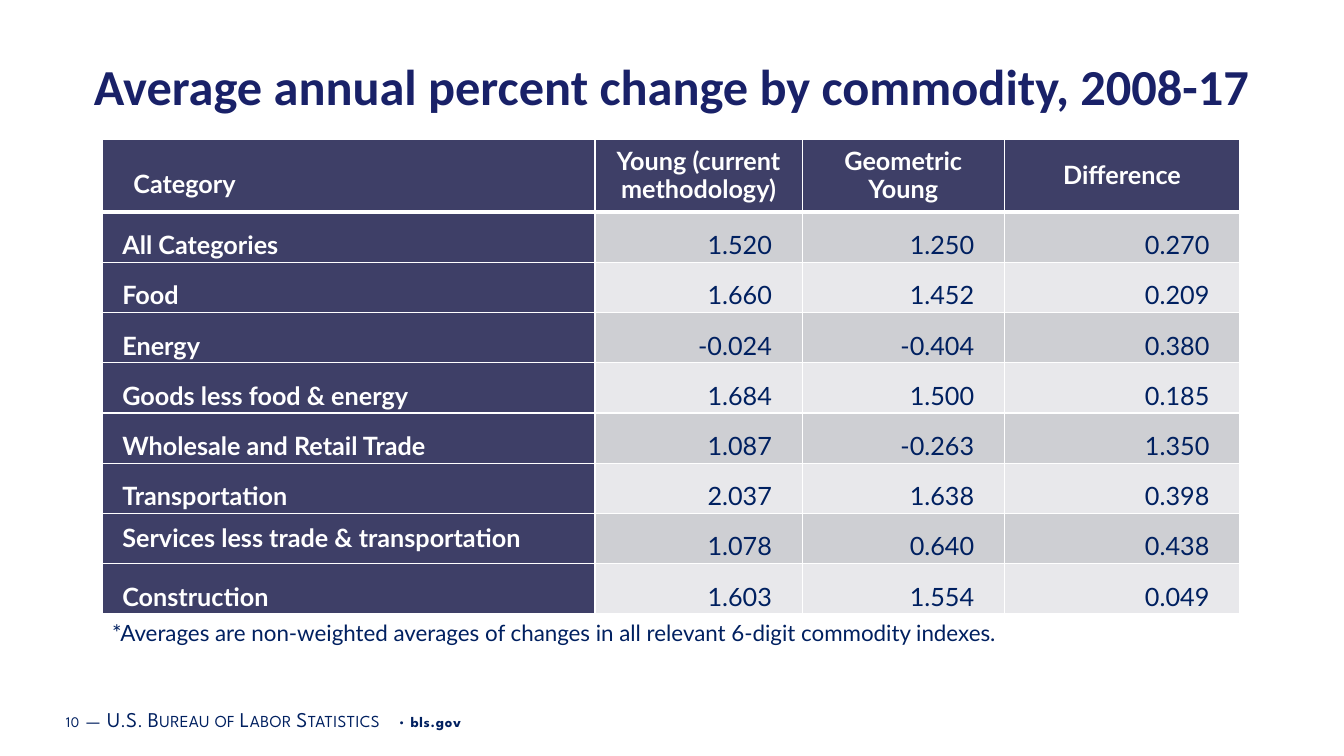
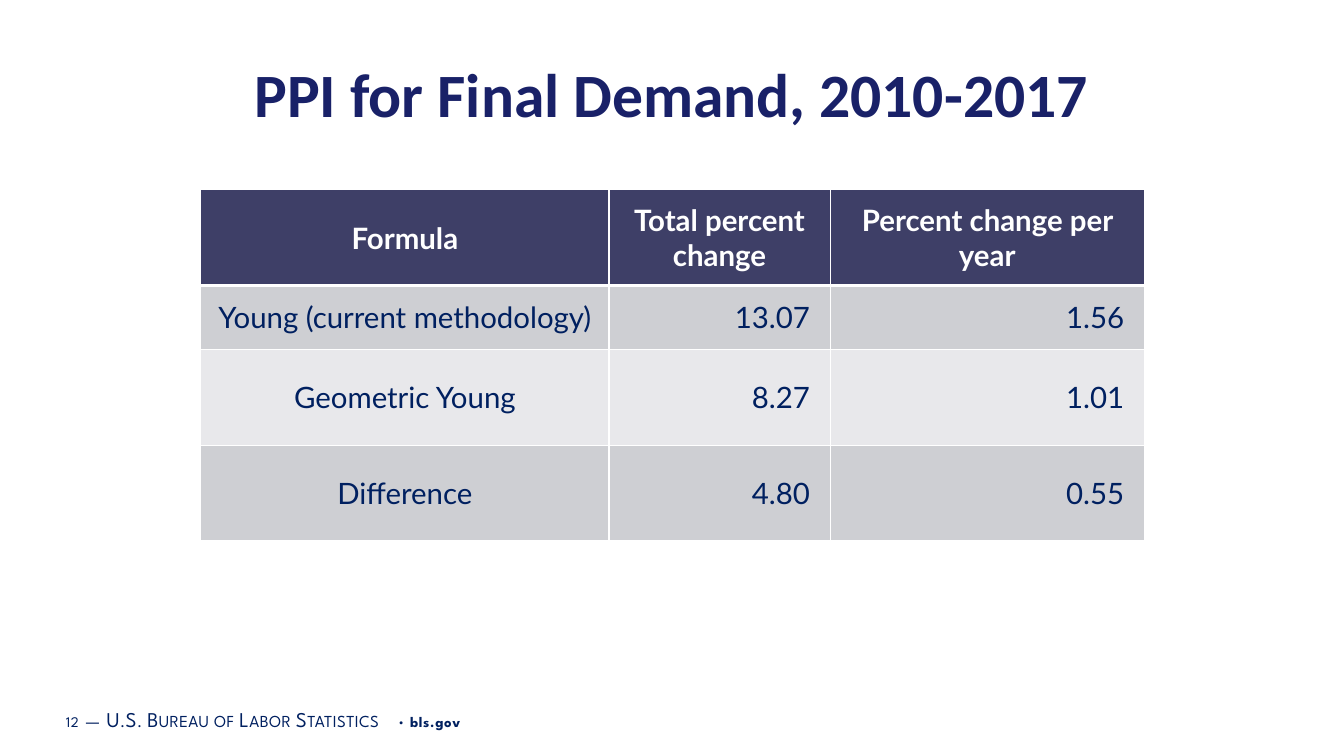
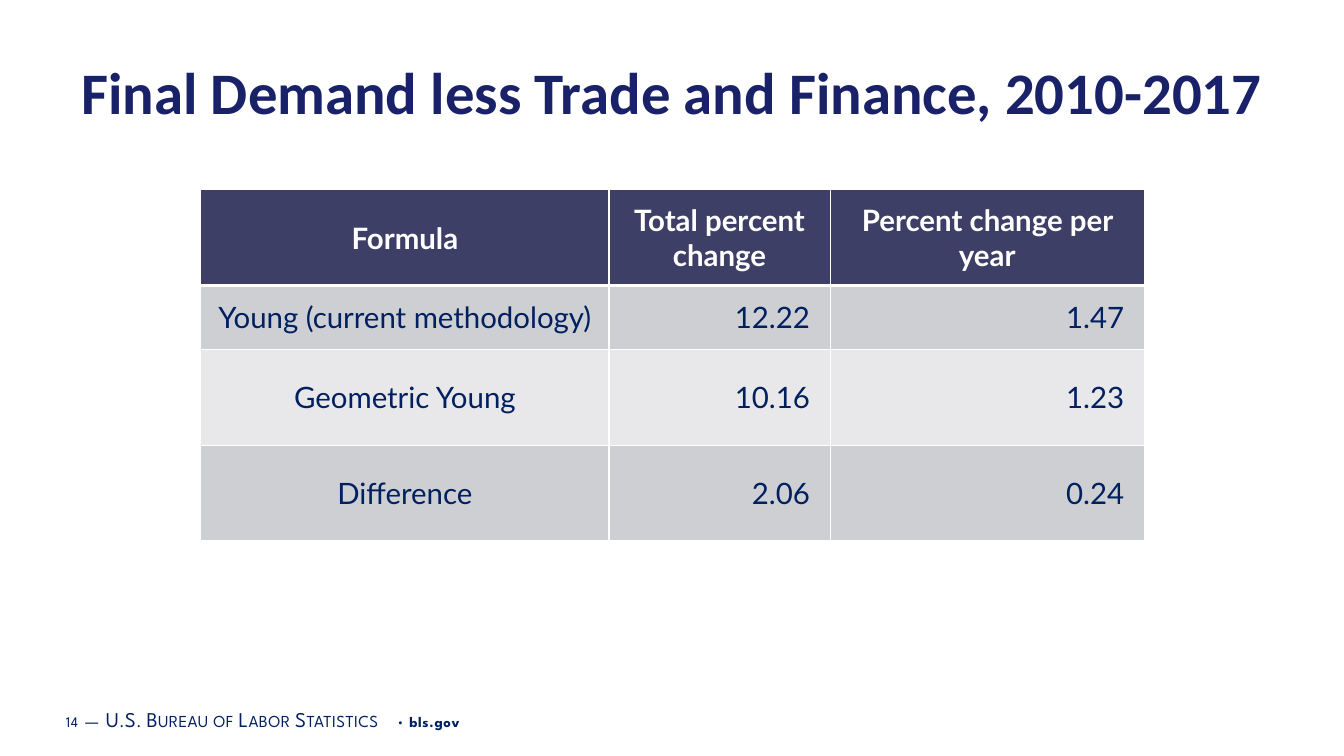
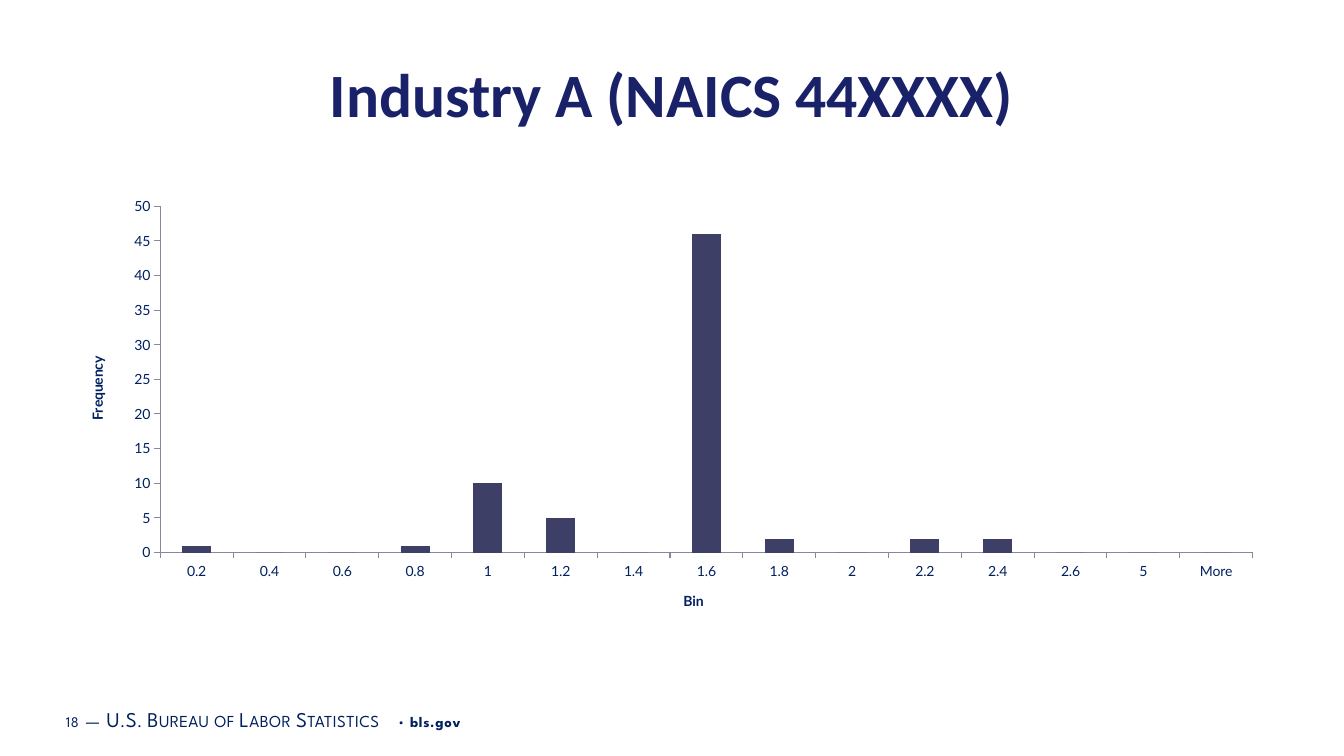
from lxml.etree import SubElement
from pptx import Presentation
from pptx.chart.data import CategoryChartData
from pptx.dml.color import RGBColor
from pptx.enum.chart import XL_CHART_TYPE, XL_TICK_MARK
from pptx.enum.text import MSO_ANCHOR, MSO_AUTO_SIZE, PP_ALIGN
from pptx.oxml.ns import qn
from pptx.util import Pt

# Shared style
COLORS = {
    "title": "192168",
    "text": "002060",
    "dark": "3E3F67",
    "band": "CECFD3",
    "light": "E8E8EB",
    "axis": "87889C",
    "white": "FFFFFF",
}
TITLE_FONT, BODY_FONT, FOOTER_FONT = "Calibri", "Lato", "League Spartan"
LEFT, CENTER, RIGHT = PP_ALIGN.LEFT, PP_ALIGN.CENTER, PP_ALIGN.RIGHT

# Footer spans after the page number: text, size, letter spacing, small caps, bold
FOOTER_SPANS = [
    (" ", 16, 0.5, False, False),
    ("—", 15, 0.3, True, False),
    (" ", 16, 0.5, False, False),
    ("U.S. Bureau of Labor Statistics", 15, 0.3, True, False),
    (" • ", 10.5, 0.5, False, False),
    ("bls.gov", 10.5, 0.5, False, True),
]

# Content
COMMODITY_ROWS = [
    ("Category", "Young (current methodology)", "Geometric Young", "Difference"),
    ("All Categories", "1.520", "1.250", "0.270"),
    ("Food", "1.660", "1.452", "0.209"),
    ("Energy", "-0.024", "-0.404", "0.380"),
    ("Goods less food & energy", "1.684", "1.500", "0.185"),
    ("Wholesale and Retail Trade", "1.087", "-0.263", "1.350"),
    ("Transportation", "2.037", "1.638", "0.398"),
    ("Services less trade & transportation", "1.078", "0.640", "0.438"),
    ("Construction", "1.603", "1.554", "0.049"),
]
COMMODITY_NOTE = (
    "*Averages are non-weighted averages of changes in all relevant "
    "6-digit commodity indexes."
)
FORMULA_HEADER = ("Formula", "Total percent change", "Percent change per year")
FORMULA_SLIDES = [
    ("12", "PPI for Final Demand, 2010-2017", 44, [
        ("Young (current methodology)", "13.07", "1.56"),
        ("Geometric Young", "8.27", "1.01"),
        ("Difference", "4.80", "0.55"),
    ]),
    ("14", "Final Demand less Trade and Finance, 2010-2017", 42, [
        ("Young (current methodology)", "12.22", "1.47"),
        ("Geometric Young", "10.16", "1.23"),
        ("Difference", "2.06", "0.24"),
    ]),
]
FREQUENCIES = {
    "0.2": 1, "0.4": 0, "0.6": 0, "0.8": 1, "1": 10, "1.2": 5, "1.4": 0,
    "1.6": 46, "1.8": 2, "2": 0, "2.2": 2, "2.4": 2, "2.6": 0, "5": 0, "More": 0,
}


def rgb(name):
    return RGBColor.from_string(COLORS[name])


def style_font(font, name, size, color, bold=False):
    font.name, font.size, font.bold = name, Pt(size), bold
    font.color.rgb = rgb(color)


def add_span(para, text, name, size, color, bold=False):
    span = para.add_run()
    span.text = text
    style_font(span.font, name, size, color, bold)
    return span


def add_box(page, left, top, width, height):
    box = page.shapes.add_textbox(Pt(left), Pt(top), Pt(width), Pt(height))
    box.text_frame.word_wrap = True
    return box.text_frame


def add_footer(page, number):
    frame = add_box(page, 42, 499, 608, 29)
    frame.vertical_anchor = MSO_ANCHOR.MIDDLE
    frame.margin_left = frame.margin_right = Pt(5)
    frame.margin_top = frame.margin_bottom = Pt(3)
    for text, size, spacing, small, bold in [(number, 10.5, 0.5, False, False)] + FOOTER_SPANS:
        span = add_span(frame.paragraphs[0], text, FOOTER_FONT, size, "text", bold)
        properties = span._r.get_or_add_rPr()
        properties.set("spc", str(round(spacing * 100)))
        if small:
            properties.set("cap", "small")


def add_page(deck, number, title, size):
    page = deck.slides.add_slide(deck.slide_layouts[5])
    add_footer(page, number)
    holder = page.shapes.title
    holder.left, holder.top, holder.width, holder.height = Pt(48), Pt(36), Pt(864), Pt(63)
    frame = holder.text_frame
    frame.auto_size = MSO_AUTO_SIZE.NONE
    frame.vertical_anchor = MSO_ANCHOR.TOP
    para = frame.paragraphs[0]
    para.alignment = CENTER
    add_span(para, title, TITLE_FONT, size, "title", True)
    return page


def add_borders(cell, bottom, top):
    properties = cell._tc.get_or_add_tcPr()
    for tag, width in (("a:lnL", 1), ("a:lnR", 1), ("a:lnT", top), ("a:lnB", bottom)):
        line = SubElement(properties, qn(tag), w=str(Pt(width)))
        fill = SubElement(line, qn("a:solidFill"))
        SubElement(fill, qn("a:srgbClr"), val=COLORS["white"])


def add_grid(page, left, top, widths, heights, rows, size, style_cell):
    """Draw a banded table; style_cell gives (dark, align, left, right, spacing)."""
    frame = page.shapes.add_table(
        len(rows), len(widths), Pt(left), Pt(top), Pt(sum(widths)), Pt(sum(heights)))
    table = frame.table
    for column, width in zip(table.columns, widths):
        column.width = Pt(width)
    for r, (row, height) in enumerate(zip(rows, heights)):
        table.rows[r].height = Pt(height)
        for c, text in enumerate(row):
            cell = table.cell(r, c)
            dark, align, inset_left, inset_right, inset_top, spacing = style_cell(r, c)
            add_borders(cell, bottom=3 if r == 0 else 1, top=3 if r == 1 else 1)
            cell.fill.solid()
            cell.fill.fore_color.rgb = rgb("dark" if dark else "band" if r % 2 else "light")
            cell.vertical_anchor = MSO_ANCHOR.MIDDLE
            cell.margin_left, cell.margin_right = Pt(inset_left), Pt(inset_right)
            cell.margin_top = cell.margin_bottom = Pt(inset_top)
            para = cell.text_frame.paragraphs[0]
            para.alignment, para.line_spacing = align, spacing
            add_span(para, text, BODY_FONT, size, "white" if dark else "text", dark)
    return table


def commodity_cell(r, c):
    if r == 0:
        return (True, LEFT, 4.3, 4.3, 0, 1.5) if c == 0 else (True, CENTER, 4.3, 4.3, 0, Pt(20))
    if c == 0:
        wide = COMMODITY_ROWS[r][0].startswith("Services")
        return True, LEFT, 14.4, 4.3, 0, Pt(20) if wide else 1.5
    return False, RIGHT, 4.3, 21.6, 0, 1.5


def formula_cell(r, c):
    if r == 0 or c == 0:
        return r == 0, CENTER, 5, 5, 3, 1.0
    return False, RIGHT, 5, 14.4, 3, 1.0


def add_commodity_page(deck):
    page = add_page(deck, "10", "Average annual percent change by commodity, 2008-17", 36)
    heights = [52] + [35.9] * (len(COMMODITY_ROWS) - 1)
    table = add_grid(page, 73, 99.5, [352, 148, 144.5, 168], heights,
                     COMMODITY_ROWS, 18, commodity_cell)
    # The first heading is indented
    heading = table.cell(0, 0).text_frame.paragraphs[0]._p.get_or_add_pPr()
    heading.set("marL", "0")
    heading.set("indent", str(Pt(18)))
    note = add_box(page, 73, 438.5, 700, 43)
    add_span(note.paragraphs[0], COMMODITY_NOTE, BODY_FONT, 16, "text")


def add_frequency_page(deck):
    page = add_page(deck, "18", "Industry A (NAICS 44XXXX)", 44)
    data = CategoryChartData()
    data.categories = list(FREQUENCIES)
    data.add_series("Series 1", list(FREQUENCIES.values()))
    chart = page.shapes.add_chart(
        XL_CHART_TYPE.COLUMN_CLUSTERED, Pt(48), Pt(135), Pt(864), Pt(315), data).chart
    chart.has_legend = chart.has_title = False
    style_font(chart.font, BODY_FONT, 10, "text")
    plot = chart.plots[0]
    plot.gap_width, plot.vary_by_categories = 150, False
    fill = plot.series[0].format.fill
    fill.solid()
    fill.fore_color.rgb = rgb("dark")
    for axis, title in ((chart.category_axis, "Bin"), (chart.value_axis, "Frequency")):
        axis.has_major_gridlines = False
        axis.major_tick_mark = XL_TICK_MARK.OUTSIDE
        axis.format.line.color.rgb = rgb("axis")
        axis.format.line.width = Pt(0.75)
        para = axis.axis_title.text_frame.paragraphs[0]
        add_span(para, title, BODY_FONT, 10, "text", True)
    chart.value_axis.minimum_scale = 0
    chart.value_axis.maximum_scale = 50
    chart.value_axis.major_unit = 5


def main():
    deck = Presentation()
    deck.slide_width, deck.slide_height = Pt(960), Pt(540)
    add_commodity_page(deck)
    for number, title, size, rows in FORMULA_SLIDES:
        page = add_page(deck, number, title, size)
        add_grid(page, 143.5, 135.5, [291.5, 158, 224.5], [68.5, 45.5, 68.5, 68.5],
                 [FORMULA_HEADER] + rows, 21, formula_cell)
    add_frequency_page(deck)
    deck.save("out.pptx")


if __name__ == "__main__":
    main()
